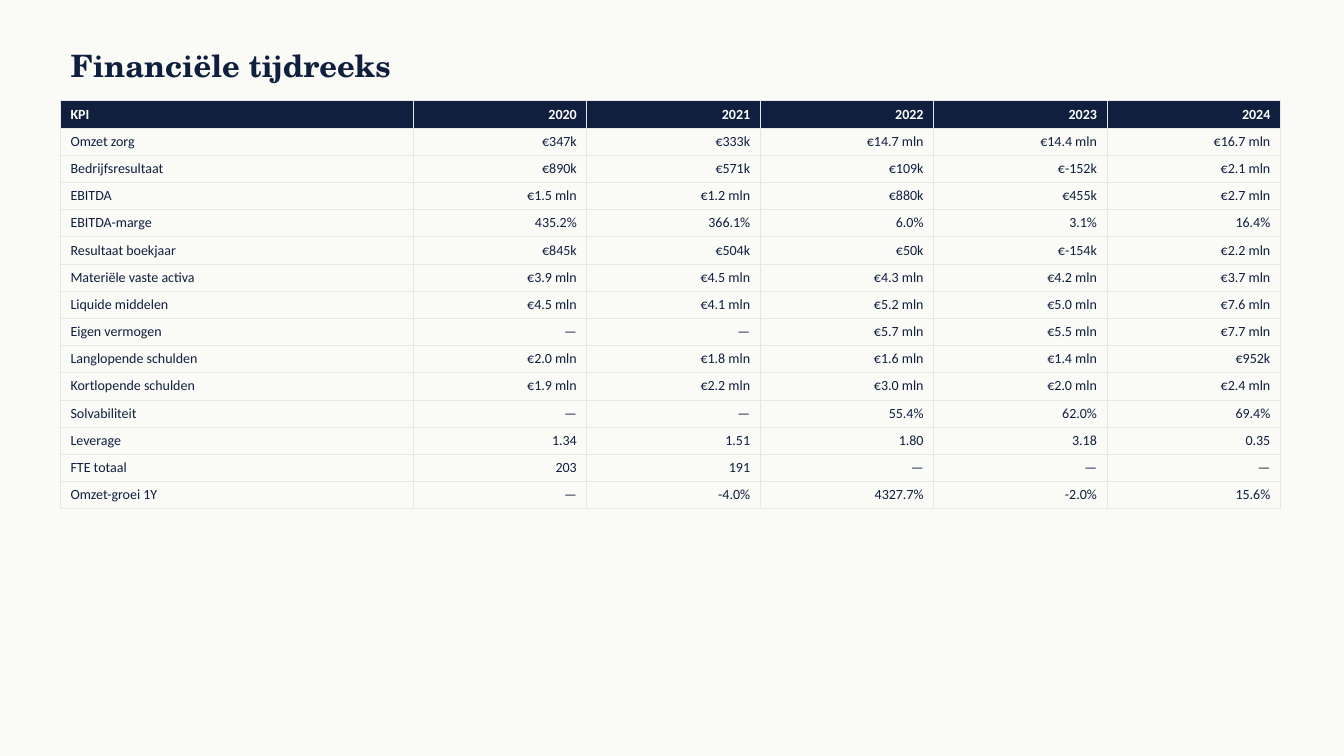
from dataclasses import dataclass

from lxml.etree import SubElement
from pptx import Presentation
from pptx.dml.color import RGBColor
from pptx.enum.text import MSO_ANCHOR, MSO_AUTO_SIZE, PP_ALIGN
from pptx.oxml.ns import qn
from pptx.util import Inches, Pt

TITLE = "Financiële tijdreeks"
HEADER = ("KPI", "2020", "2021", "2022", "2023", "2024")
KPIS = [
    ("Omzet zorg", "€347k", "€333k", "€14.7 mln", "€14.4 mln", "€16.7 mln"),
    ("Bedrijfsresultaat", "€890k", "€571k", "€109k", "€-152k", "€2.1 mln"),
    ("EBITDA", "€1.5 mln", "€1.2 mln", "€880k", "€455k", "€2.7 mln"),
    ("EBITDA-marge", "435.2%", "366.1%", "6.0%", "3.1%", "16.4%"),
    ("Resultaat boekjaar", "€845k", "€504k", "€50k", "€-154k", "€2.2 mln"),
    ("Materiële vaste activa", "€3.9 mln", "€4.5 mln", "€4.3 mln", "€4.2 mln", "€3.7 mln"),
    ("Liquide middelen", "€4.5 mln", "€4.1 mln", "€5.2 mln", "€5.0 mln", "€7.6 mln"),
    ("Eigen vermogen", "—", "—", "€5.7 mln", "€5.5 mln", "€7.7 mln"),
    ("Langlopende schulden", "€2.0 mln", "€1.8 mln", "€1.6 mln", "€1.4 mln", "€952k"),
    ("Kortlopende schulden", "€1.9 mln", "€2.2 mln", "€3.0 mln", "€2.0 mln", "€2.4 mln"),
    ("Solvabiliteit", "—", "—", "55.4%", "62.0%", "69.4%"),
    ("Leverage", "1.34", "1.51", "1.80", "3.18", "0.35"),
    ("FTE totaal", "203", "191", "—", "—", "—"),
    ("Omzet-groei 1Y", "—", "-4.0%", "4327.7%", "-2.0%", "15.6%"),
]


@dataclass(frozen=True)
class Theme:
    background: str = "FAFAF7"
    navy: str = "0F1F3D"
    white: str = "FFFFFF"
    border: str = "E5E7EB"
    border_width: float = 0.5
    title_font: str = "TeX Gyre Schola"
    table_font: str = "Calibri"
    title_size: int = 22
    table_size: int = 10


THEME = Theme()
LEFT = 0.6
TABLE_TOP = 1
KPI_WIDTH, YEAR_WIDTH = 3.5, 1.72
ROW_HEIGHT = 0.27


def add_run(paragraph, text, font_name, size, color, bold):
    run = paragraph.add_run()
    run.text = text
    run.font.name = font_name
    run.font.size = Pt(size)
    run.font.bold = bold
    run.font.color.rgb = RGBColor.from_string(color)


def add_borders(cell):
    properties = cell._tc.get_or_add_tcPr()
    for side in ("a:lnL", "a:lnR", "a:lnT", "a:lnB"):
        line = SubElement(properties, qn(side), w=str(Pt(THEME.border_width)))
        fill = SubElement(line, qn("a:solidFill"))
        SubElement(fill, qn("a:srgbClr"), val=THEME.border)


def format_title(title):
    title.left, title.top = Inches(LEFT), Inches(0.4)
    title.width, title.height = Inches(12), Inches(0.5)
    frame = title.text_frame
    frame.word_wrap = True
    frame.auto_size = MSO_AUTO_SIZE.NONE
    frame.vertical_anchor = MSO_ANCHOR.MIDDLE
    paragraph = frame.paragraphs[0]
    paragraph.alignment = PP_ALIGN.LEFT
    add_run(paragraph, TITLE, THEME.title_font, THEME.title_size, THEME.navy, True)


def fill_cell(cell, text, is_header, is_label):
    add_borders(cell)
    if is_header:
        cell.fill.solid()
        cell.fill.fore_color.rgb = RGBColor.from_string(THEME.navy)
    else:
        cell.fill.background()
    paragraph = cell.text_frame.paragraphs[0]
    paragraph.alignment = PP_ALIGN.LEFT if is_label else PP_ALIGN.RIGHT
    color = THEME.white if is_header else THEME.navy
    add_run(paragraph, text, THEME.table_font, THEME.table_size, color, is_header)


def add_kpi_table(slide):
    rows = [HEADER, *KPIS]
    widths = [KPI_WIDTH] + [YEAR_WIDTH] * (len(HEADER) - 1)
    table = slide.shapes.add_table(
        len(rows), len(widths), Inches(LEFT), Inches(TABLE_TOP),
        Inches(sum(widths)), Inches(ROW_HEIGHT * len(rows)),
    ).table
    table.horz_banding = False
    for column, width in zip(table.columns, widths):
        column.width = Inches(width)
    for row_index, values in enumerate(rows):
        table.rows[row_index].height = Inches(ROW_HEIGHT)
        for column_index, text in enumerate(values):
            cell = table.cell(row_index, column_index)
            fill_cell(cell, text, row_index == 0, column_index == 0)


def main():
    presentation = Presentation()
    presentation.slide_width = Inches(13.33)
    presentation.slide_height = Inches(7.5)
    slide = presentation.slides.add_slide(presentation.slide_layouts.get_by_name("Title Only"))
    slide.background.fill.solid()
    slide.background.fill.fore_color.rgb = RGBColor.from_string(THEME.background)
    format_title(slide.shapes.title)
    add_kpi_table(slide)
    presentation.save("out.pptx")


if __name__ == "__main__":
    main()
